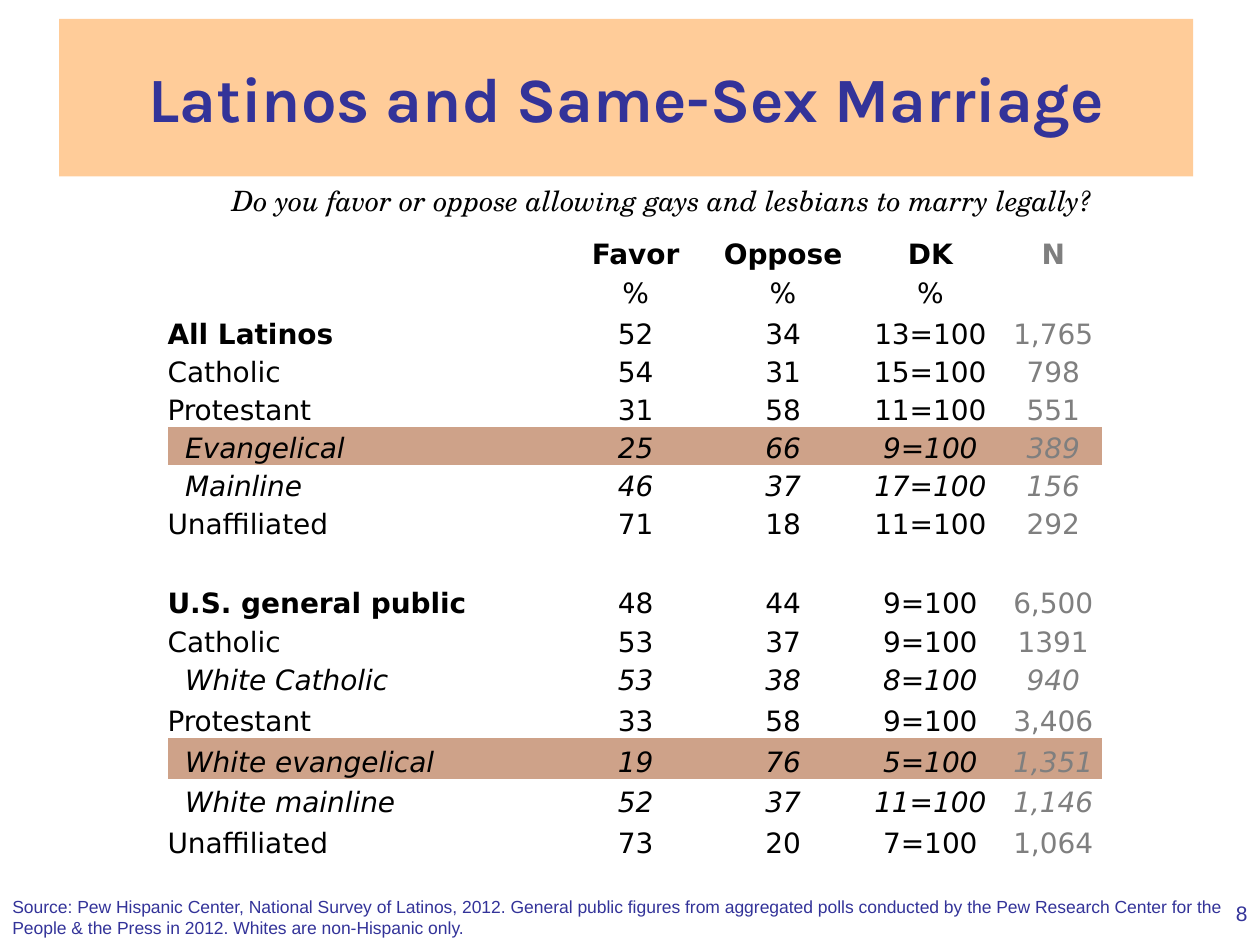
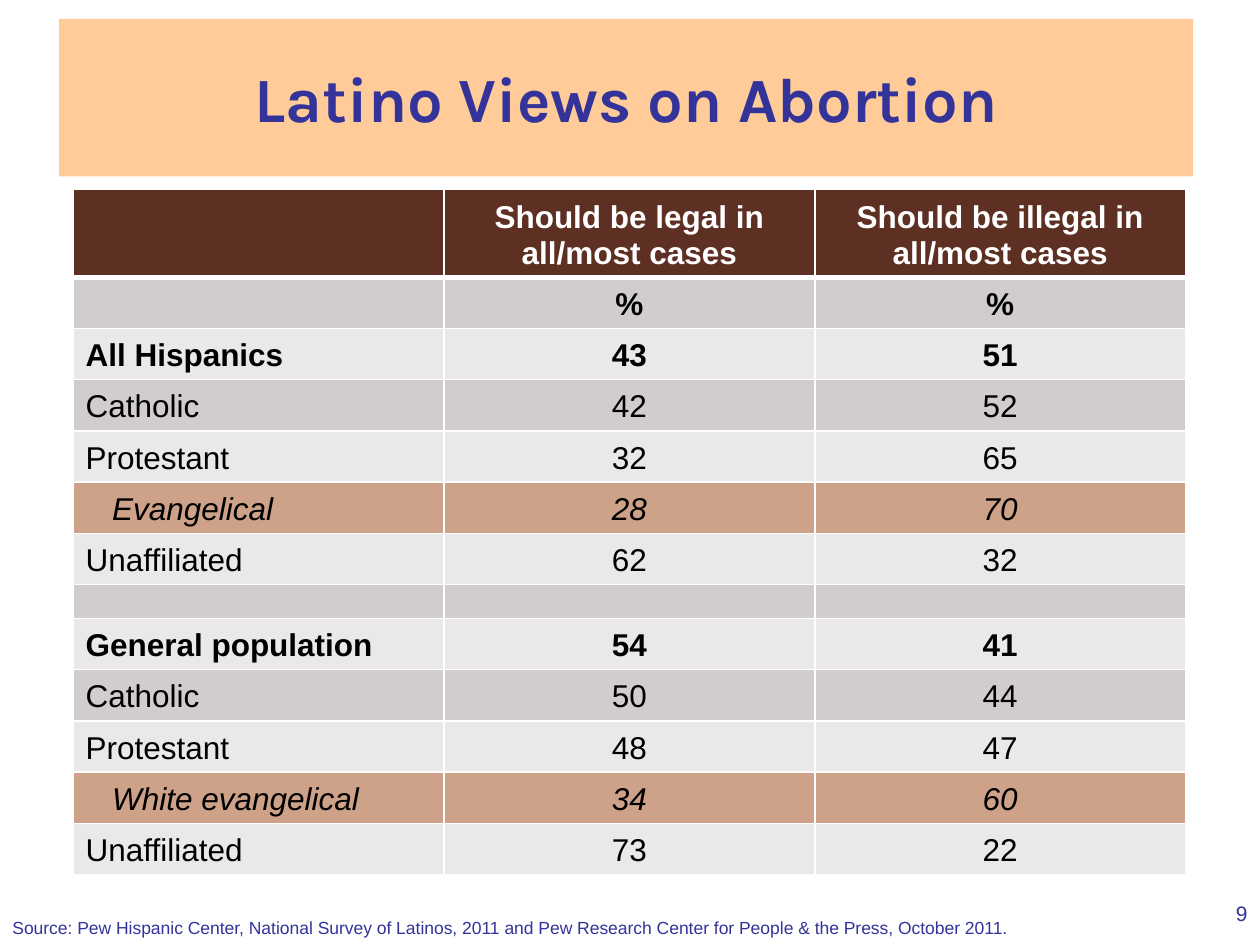
from lxml.etree import SubElement
from pptx import Presentation
from pptx.dml.color import RGBColor
from pptx.enum.shapes import MSO_SHAPE as Shape
from pptx.enum.text import MSO_ANCHOR as Anchor, MSO_AUTO_SIZE as AutoSize, PP_ALIGN as Align
from pptx.oxml.ns import qn
from pptx.util import Inches, Pt

INDIGO = RGBColor(0x33, 0x33, 0x99)
PEACH = RGBColor(0xFF, 0xCC, 0x99)
TAN = RGBColor(0xCE, 0xA2, 0x89)
BROWN = RGBColor(0x5E, 0x2F, 0x23)
DARK_BAND = RGBColor(0xD2, 0xCD, 0xCD)
LIGHT_BAND = RGBColor(0xEA, 0xE8, 0xE8)
GRAY = RGBColor(0x7F, 0x7F, 0x7F)
BLACK = RGBColor(0, 0, 0)
WHITE = RGBColor(0xFF, 0xFF, 0xFF)

NO_GRID_STYLE = "{2D5ABB26-0587-4C30-8999-92F81FD0307C}"

HEAD, UNIT, TOTAL, GROUP, SUB, FOCUS, GAP = (
    "head", "unit", "total", "group", "subgroup", "focus", "gap")
INDENTED = (SUB, FOCUS)

MARRIAGE = {
    "title": "Latinos and Same-Sex Marriage",
    "question": "Do you favor or oppose allowing gays and lesbians to marry legally?",
    "source": "Source: Pew Hispanic Center, National Survey of Latinos, 2012. General public figures "
              "from aggregated polls conducted by the Pew Research Center for the People & the Press "
              "in 2012. Whites are non-Hispanic only.",
    "source_place": (0, 7.06, 9.83, 0.44),
    "page": "8",
    "rows": [
        (HEAD, "", "Favor", "Oppose", "DK", "N"),
        (UNIT, "", "%", "%", "%", ""),
        (TOTAL, "All Latinos", "52", "34", "13=100", "1,765"),
        (GROUP, "Catholic", "54", "31", "15=100", "798"),
        (GROUP, "Protestant", "31", "58", "11=100", "551"),
        (FOCUS, "Evangelical", "25", "66", "9=100", "389"),
        (SUB, "Mainline", "46", "37", "17=100", "156"),
        (GROUP, "Unaffiliated", "71", "18", "11=100", "292"),
        (GAP, "", "", "", "", ""),
        (TOTAL, "U.S. general public", "48", "44", "9=100", "6,500"),
        (GROUP, "Catholic", "53", "37", "9=100", "1391"),
        (SUB, "White Catholic", "53", "38", "8=100", "940"),
        (GROUP, "Protestant", "33", "58", "9=100", "3,406"),
        (FOCUS, "White evangelical", "19", "76", "5=100", "1,351"),
        (SUB, "White mainline", "52", "37", "11=100", "1,146"),
        (GROUP, "Unaffiliated", "73", "20", "7=100", "1,064"),
    ],
}

ABORTION = {
    "title": "Latino Views on Abortion",
    "source": "Source: Pew Hispanic Center, National Survey of Latinos, 2011 and Pew Research Center "
              "for People & the Press, October 2011.",
    "source_place": (0, 7.23, 8.18, 0.27),
    "page": "9",
    "rows": [
        (HEAD, "", "Should be legal in all/most cases", "Should be illegal in all/most cases"),
        (UNIT, "", "%", "%"),
        (TOTAL, "All Hispanics", "43", "51"),
        (GROUP, "Catholic", "42", "52"),
        (GROUP, "Protestant", "32", "65"),
        (FOCUS, "Evangelical", "28", "70"),
        (GROUP, "Unaffiliated", "62", "32"),
        (GAP, "", "", ""),
        (TOTAL, "General population", "54", "41"),
        (GROUP, "Catholic", "50", "44"),
        (GROUP, "Protestant", "48", "47"),
        (FOCUS, "White evangelical", "34", "60"),
        (GROUP, "Unaffiliated", "73", "22"),
    ],
}


def write(paragraph, words, font, size, color, align=Align.LEFT, bold=False, italic=False):
    paragraph.alignment = align
    run = paragraph.add_run()
    run.text = words
    run.font.name, run.font.size = font, Pt(size)
    run.font.bold, run.font.italic = bold, italic
    run.font.color.rgb = color


def add_text(slide, place, words, font, size, color, **style):
    frame = slide.shapes.add_textbox(*map(Inches, place)).text_frame
    frame.word_wrap = True
    write(frame.paragraphs[0], words, font, size, color, **style)
    return frame


def add_titled_slide(deck, content):
    slide = deck.slides.add_slide(deck.slide_layouts[6])
    band = slide.shapes.add_shape(Shape.RECTANGLE, *map(Inches, (0.47, 0.15, 9, 1.25)))
    band.shadow.inherit = False
    band.fill.solid()
    band.fill.fore_color.rgb = PEACH
    band.line.fill.background()
    band.text_frame.vertical_anchor = Anchor.MIDDLE
    write(band.text_frame.paragraphs[0], content["title"], "Karla", 36, INDIGO,
          align=Align.CENTER, bold=True)
    source = add_text(slide, content["source_place"], content["source"], "Arial", 10, INDIGO)
    source.auto_size = AutoSize.SHAPE_TO_FIT_TEXT
    add_text(slide, (7.67, 7.1, 2.33, 0.4), content["page"], "Arial", 12, INDIGO, align=Align.RIGHT)
    return slide


def add_grid(slide, left, top, widths, heights):
    grid = slide.shapes.add_table(len(heights), len(widths), Inches(left), Inches(top),
                                  Inches(sum(widths)), Pt(sum(heights))).table
    grid.first_row = grid.horz_banding = False
    grid._tbl.tblPr.find(qn("a:tableStyleId")).text = NO_GRID_STYLE
    for column, width in zip(grid.columns, widths):
        column.width = Inches(width)
    for row, height in zip(grid.rows, heights):
        row.height = Pt(height)
    return grid


def each_cell(grid, rows):
    for r, (kind, *words) in enumerate(rows):
        for c, word in enumerate(words):
            yield r, c, kind, word, grid.cell(r, c)


def write_cell(cell, column, kind, word, font, size, color, bold):
    cell.vertical_anchor = Anchor.BOTTOM
    paragraph = cell.text_frame.paragraphs[0]
    if word:
        align = Align.LEFT if column == 0 else Align.CENTER
        write(paragraph, word, font, size, color, align, bold, italic=kind in INDENTED)
    else:
        SubElement(paragraph._p, qn("a:endParaRPr"), sz=str(size * 100))
    return paragraph


def paint(cell, color):
    cell.fill.solid()
    cell.fill.fore_color.rgb = color


def add_white_borders(cell, top, bottom):
    properties = cell._tc.get_or_add_tcPr()
    for side, points in (("L", 1), ("R", 1), ("T", top), ("B", bottom)):
        line = SubElement(properties, qn(f"a:ln{side}"), w=str(Pt(points)))
        SubElement(SubElement(line, qn("a:solidFill")), qn("a:srgbClr"), val=str(WHITE))


def build_marriage(deck):
    slide = add_titled_slide(deck, MARRIAGE)
    rows = MARRIAGE["rows"]
    normal_height, tall_height, tall_rows_at_end = 21.8, 23.4, 4
    first_tall_at_end = len(rows) - tall_rows_at_end
    heights = [tall_height if kind in (HEAD, TOTAL) or r >= first_tall_at_end else normal_height
               for r, (kind, *_) in enumerate(rows)]
    widths = (3.13, 1.17, 1.17, 1.17, 0.78)
    count_column = len(widths) - 1
    grid = add_grid(slide, 1.33, 1.83, widths, heights)

    for r, c, kind, word, cell in each_cell(grid, rows):
        cell.margin_left = cell.margin_right = cell.margin_top = cell.margin_bottom = 0
        if c == 0 and kind in INDENTED:
            cell.margin_left = Inches(0.14)
        color = GRAY if c == count_column else BLACK
        bold = kind == HEAD or (kind == TOTAL and c == 0)
        paragraph = write_cell(cell, c, kind, word, "DejaVu Sans", 16, color, bold)
        paragraph.space_after = Pt(2)
        if kind == FOCUS:
            paint(cell, TAN)

    question = add_text(slide, (1.42, 1.5, 7.67, 0.27), MARRIAGE["question"], "TeX Gyre Schola",
                        16, BLACK, align=Align.CENTER, italic=True)
    question.vertical_anchor = Anchor.BOTTOM
    question.auto_size = AutoSize.SHAPE_TO_FIT_TEXT
    question.paragraphs[0].line_spacing = Pt(12)
    question.paragraphs[0].space_after = Pt(6)


def build_abortion(deck):
    slide = add_titled_slide(deck, ABORTION)
    rows = ABORTION["rows"]
    normal_height, special_heights = 29.3, {HEAD: 50, GAP: 19}
    heights = [special_heights.get(kind, normal_height) for kind, *_ in rows]
    grid = add_grid(slide, 0.58, 1.5, [8.83 / 3] * 3, heights)
    thin, thick = 1, 3

    for r, c, kind, word, cell in each_cell(grid, rows):
        if c == 0 and kind in INDENTED:
            cell.margin_left = Inches(0.31)
        size = 10 if kind == GAP else 18
        color = WHITE if kind == HEAD else BLACK
        write_cell(cell, c, kind, word, "Arial", size, color, bold=kind in (HEAD, UNIT, TOTAL))
        add_white_borders(cell, top=thick if kind == UNIT else thin,
                          bottom=thick if kind == HEAD else thin)
        band = DARK_BAND if r % 2 else LIGHT_BAND
        paint(cell, {HEAD: BROWN, FOCUS: TAN}.get(kind, band))


def main():
    deck = Presentation()
    deck.slide_width, deck.slide_height = Inches(10), Inches(7.5)
    build_marriage(deck)
    build_abortion(deck)
    deck.save("out.pptx")


if __name__ == "__main__":
    main()
